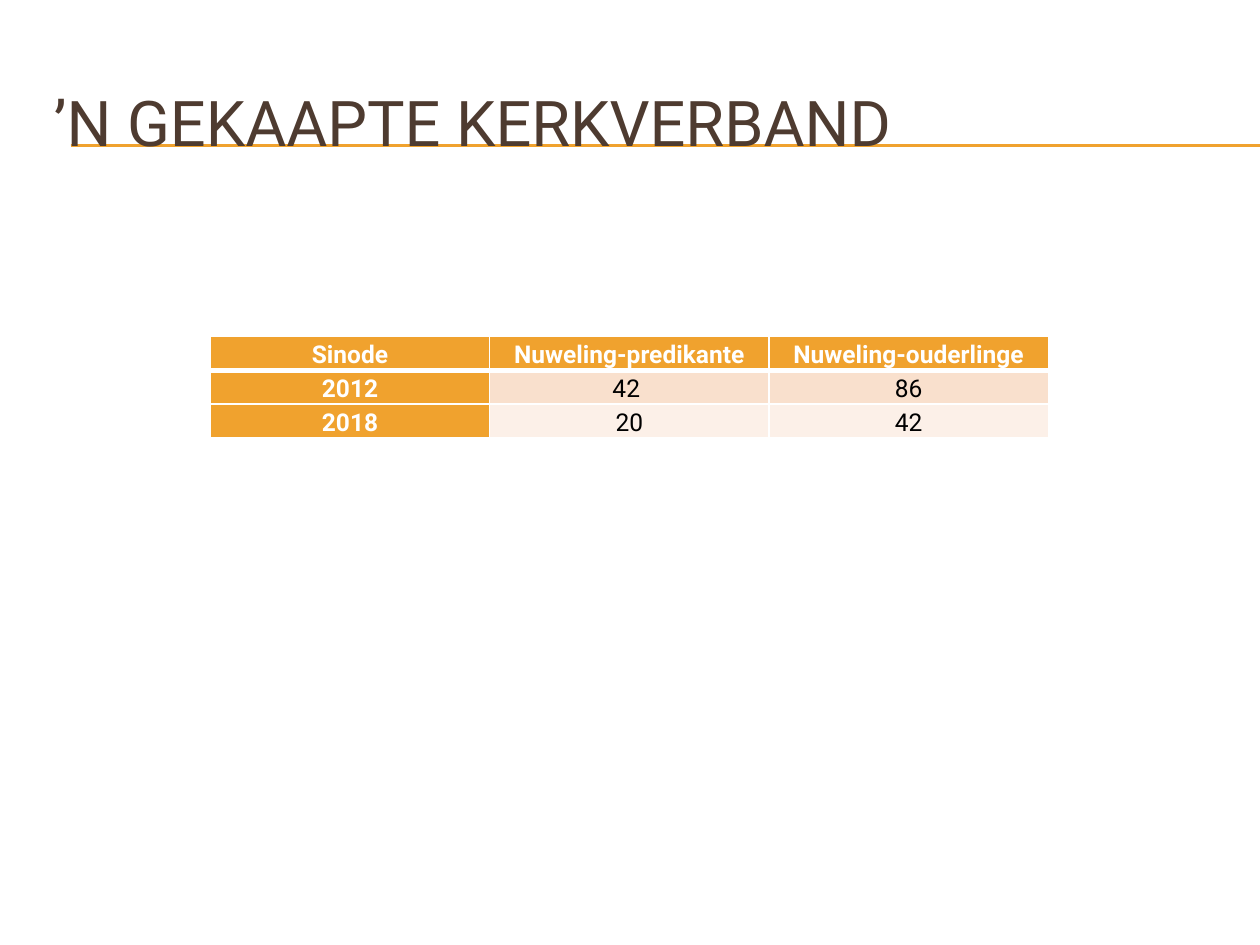
from dataclasses import dataclass

from lxml.etree import SubElement
from pptx import Presentation
from pptx.dml.color import RGBColor
from pptx.enum.shapes import MSO_CONNECTOR
from pptx.enum.text import MSO_ANCHOR, PP_ALIGN
from pptx.oxml import parse_xml
from pptx.oxml.ns import nsdecls, qn
from pptx.util import Inches, Pt

FONT = "Roboto"
COLORS = {
    "accent": "F0A22E",
    "title": "4E3B30",
    "white": "FFFFFF",
    "black": "000000",
    "band_dark": "F9E0CD",
    "band_light": "FCF0E8",
}


@dataclass(frozen=True)
class TableRow:
    values: tuple[str, ...]
    band: str
    top_border: float = 1
    bottom_border: float = 1


ROWS = (
    TableRow(("Sinode", "Nuweling-predikante", "Nuweling-ouderlinge"), "accent", bottom_border=3),
    TableRow(("2012", "42 ", "86"), "band_dark", top_border=3),
    TableRow(("2018", "20", "42"), "band_light"),
)


def rgb(name: str) -> RGBColor:
    """Return the named colour."""
    return RGBColor.from_string(COLORS[name])


def add_text(paragraph, text: str, size: float, color: str, bold: bool = False) -> None:
    """Append a formatted run to a paragraph."""
    run = paragraph.add_run()
    run.text = text
    run.font.name = FONT
    run.font.size = Pt(size)
    run.font.bold = bold
    run.font.color.rgb = rgb(color)


def add_rule(slide, top: float) -> None:
    """Draw a thin rule running to the right edge of the slide."""
    rule = slide.shapes.add_connector(
        MSO_CONNECTOR.STRAIGHT, Inches(0.56), Inches(top), Inches(10), Inches(top)
    )
    rule.line.color.rgb = rgb("accent")
    rule.line.width = Pt(0.75)
    SubElement(rule._element.spPr, qn("a:effectLst"))


def add_title(slide, text: str) -> None:
    """Place the slide title."""
    title = slide.shapes.add_textbox(Inches(0.33), Inches(0.5), Inches(9.5), Inches(0.92))
    frame = title.text_frame
    frame.word_wrap = True
    frame.vertical_anchor = MSO_ANCHOR.MIDDLE
    add_text(frame.paragraphs[0], text, 36, "title")


def set_borders(cell, row: TableRow) -> None:
    """Give a cell white borders ahead of its fill."""
    widths = {"lnL": 1, "lnR": 1, "lnT": row.top_border, "lnB": row.bottom_border}
    properties = cell._tc.get_or_add_tcPr()
    for position, (side, width) in enumerate(widths.items()):
        border = parse_xml(
            f'<a:{side} {nsdecls("a")} w="{Pt(width)}"><a:solidFill>'
            f'<a:srgbClr val="{COLORS["white"]}"/></a:solidFill></a:{side}>'
        )
        properties.insert(position, border)


def fill_cell(cell, text: str, row: TableRow, is_heading: bool) -> None:
    """Write and style one table cell."""
    cell.margin_left = cell.margin_right = Inches(0.07)
    cell.margin_top = cell.margin_bottom = 0
    cell.fill.solid()
    cell.fill.fore_color.rgb = rgb("accent" if is_heading else row.band)
    set_borders(cell, row)
    paragraph = cell.text_frame.paragraphs[0]
    paragraph.alignment = PP_ALIGN.CENTER
    paragraph.line_spacing = 1.15
    add_text(paragraph, text, 14, "white" if is_heading else "black", is_heading)


def add_synod_table(slide, rows: tuple[TableRow, ...]) -> None:
    """Build the table of newcomers per synod."""
    column_count = len(rows[0].values)
    synods = slide.shapes.add_table(
        len(rows), column_count, Inches(1.67), Inches(2.67), Inches(6.65), Inches(0.78)
    ).table
    for row_index, row in enumerate(rows):
        for column_index, text in enumerate(row.values):
            is_heading = row_index == 0 or column_index == 0
            fill_cell(synods.cell(row_index, column_index), text, row, is_heading)


def main() -> None:
    """Build and save the slide."""
    presentation = Presentation()
    presentation.slide_width = Inches(10)
    presentation.slide_height = Inches(7.5)
    slide = presentation.slides.add_slide(presentation.slide_layouts[6])
    for top in (1.15, 1.16):
        add_rule(slide, top)
    add_title(slide, "’N GEKAAPTE KERKVERBAND")
    add_synod_table(slide, ROWS)
    presentation.save("out.pptx")


if __name__ == "__main__":
    main()
